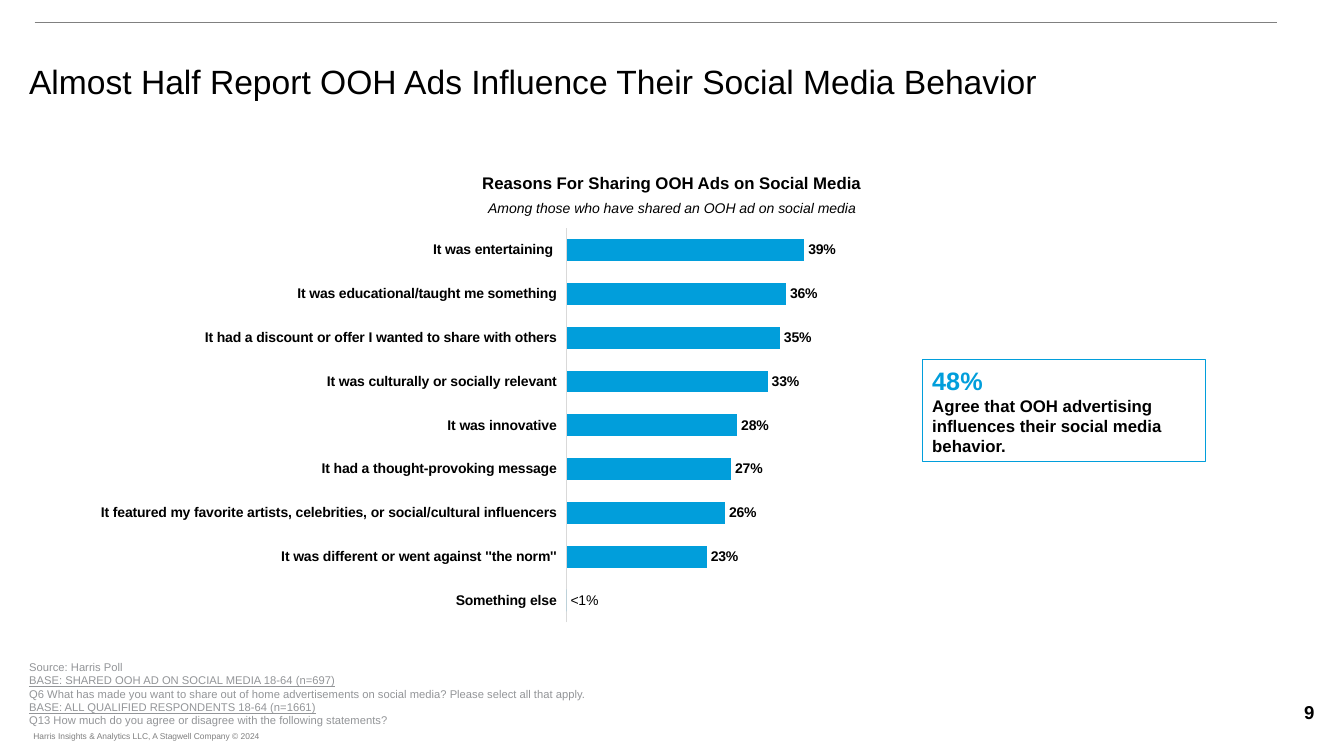
from collections import namedtuple

from lxml.etree import SubElement
from pptx import Presentation
from pptx.chart.data import CategoryChartData
from pptx.dml.color import RGBColor
from pptx.enum.chart import XL_CHART_TYPE, XL_LABEL_POSITION, XL_TICK_LABEL_POSITION, XL_TICK_MARK
from pptx.enum.shapes import MSO_CONNECTOR, MSO_SHAPE
from pptx.enum.text import MSO_ANCHOR, PP_ALIGN
from pptx.oxml import parse_xml
from pptx.oxml.ns import nsdecls, qn
from pptx.util import Pt

BLACK = RGBColor(0, 0, 0)
BLUE = RGBColor(0x01, 0x9E, 0xDB)
RULE_GRAY = RGBColor(0x80, 0x80, 0x80)
FOOTER_GRAY = RGBColor(0x7F, 0x7F, 0x7F)
NOTE_GRAY = RGBColor(0x93, 0x95, 0x98)
AXIS_GRAY = RGBColor(0xD9, 0xD9, 0xD9)
FONT = "Arial"

Box = namedtuple("Box", "left top width height")

REASONS = {
    "It was entertaining ": 0.39,
    "It was educational/taught me something": 0.36,
    "It had a discount or offer I wanted to share with others": 0.35,
    "It was culturally or socially relevant": 0.33,
    "It was innovative": 0.28,
    "It had a thought-provoking message": 0.27,
    "It featured my favorite artists, celebrities, or social/cultural influencers": 0.26,
    "It was different or went against ''the norm''": 0.23,
    "Something else": 0,
}

NOTES = [
    ("Source: Harris Poll", False),
    ("BASE: SHARED OOH AD ON SOCIAL MEDIA 18-64 (n=697)", True),
    ("Q6 What has made you want to share out of home advertisements on social media? "
     "Please select all that apply.", False),
    ("BASE: ALL QUALIFIED RESPONDENTS 18-64 (n=1661)", True),
    ("Q13 How much do you agree or disagree with the following statements?", False),
]


def in_points(box):
    return [Pt(length) for length in box]


def style_font(font, size, color=BLACK, bold=False, italic=False, underline=False):
    font.name = FONT
    font.size = Pt(size)
    font.bold = bold
    font.italic = italic
    font.underline = underline
    font.color.rgb = color


def write_line(text_frame, text, align=PP_ALIGN.LEFT, **style):
    paragraph = text_frame.add_paragraph() if text_frame.text else text_frame.paragraphs[0]
    paragraph.alignment = align
    run = paragraph.add_run()
    run.text = text
    style_font(run.font, **style)


def add_text_area(slide, box, anchor=MSO_ANCHOR.TOP):
    text_frame = slide.shapes.add_textbox(*in_points(box)).text_frame
    text_frame.word_wrap = True
    text_frame.vertical_anchor = anchor
    return text_frame


def add_header(slide, box):
    rule = slide.shapes.add_connector(
        MSO_CONNECTOR.STRAIGHT, Pt(box.left + 11), Pt(box.top),
        Pt(box.left + box.width), Pt(box.top))
    rule.line.color.rgb = RULE_GRAY
    rule.line.width = Pt(0.5)
    SubElement(rule._element.spPr, qn("a:effectLst"))
    title = add_text_area(
        slide, Box(box.left, box.top + 25.2, box.width, box.height - 25.2), MSO_ANCHOR.MIDDLE)
    write_line(title, "Almost Half Report OOH Ads Influence Their Social Media Behavior", size=24)


def add_chart_heading(slide, box):
    heading = add_text_area(slide, Box(box.left, box.top, box.width, 21.6))
    write_line(heading, "Reasons For Sharing OOH Ads on Social Media",
               align=PP_ALIGN.CENTER, size=12, bold=True)
    subheading = add_text_area(slide, Box(box.left, box.top + 18.7, box.width, 19.4))
    write_line(subheading, "Among those who have shared an OOH ad on social media",
               align=PP_ALIGN.CENTER, size=10, italic=True)


def add_reasons_chart(slide, box):
    data = CategoryChartData(number_format="0%")
    data.categories = list(REASONS)
    data.add_series("Series 1", list(REASONS.values()))
    chart = slide.shapes.add_chart(XL_CHART_TYPE.BAR_CLUSTERED, *in_points(box), data).chart
    chart.has_legend = False
    chart.has_title = False
    style_font(chart.font, 12, bold=True)

    category_axis = chart.category_axis
    category_axis.reverse_order = True
    category_axis.major_tick_mark = XL_TICK_MARK.NONE
    category_axis.minor_tick_mark = XL_TICK_MARK.NONE
    category_axis.tick_label_position = XL_TICK_LABEL_POSITION.LOW
    category_axis.format.line.color.rgb = AXIS_GRAY
    category_axis.format.line.width = Pt(0.75)
    style_font(category_axis.tick_labels.font, 10, bold=True)

    value_axis = chart.value_axis
    value_axis.minimum_scale = 0
    value_axis.maximum_scale = 1
    value_axis.has_major_gridlines = False
    value_axis.visible = False

    plot = chart.plots[0]
    plot.gap_width = 100
    plot.vary_by_categories = False
    series = plot.series[0]
    series.format.fill.solid()
    series.format.fill.fore_color.rgb = BLUE
    labels = series.data_labels
    labels.show_value = True
    labels.number_format = "0%"
    labels.number_format_is_linked = False
    labels.position = XL_LABEL_POSITION.OUTSIDE_END
    style_font(labels.font, 10, bold=True)
    smallest_label = series.points[len(REASONS) - 1].data_label
    write_line(smallest_label.text_frame, "<1%", size=10)
    smallest_label.position = XL_LABEL_POSITION.OUTSIDE_END

    plot_area = chart._chartSpace.chart.plotArea
    for layout in plot_area.findall(qn("c:layout")):
        plot_area.remove(layout)
    plot_area.insert(0, parse_xml(
        f'<c:layout {nsdecls("c")}><c:manualLayout><c:layoutTarget val="inner"/>'
        '<c:xMode val="edge"/><c:yMode val="edge"/><c:x val="0.44"/><c:y val="0"/>'
        '<c:w val="0.508"/><c:h val="1"/></c:manualLayout></c:layout>'))


def add_callout(slide, box):
    callout = slide.shapes.add_shape(MSO_SHAPE.RECTANGLE, *in_points(box))
    callout.shadow.inherit = False
    callout.fill.background()
    callout.line.color.rgb = BLUE
    callout.line.width = Pt(0.75)
    text_frame = callout.text_frame
    text_frame.word_wrap = True
    text_frame.vertical_anchor = MSO_ANCHOR.MIDDLE
    write_line(text_frame, "48%", size=18, color=BLUE, bold=True)
    write_line(text_frame, "Agree that OOH advertising influences their social media behavior.",
               size=12, bold=True)


def add_footer(slide, box):
    notes = add_text_area(slide, Box(box.left, box.top, 728.6, 55.4))
    for text, underline in NOTES:
        write_line(notes, text, size=8, color=NOTE_GRAY, underline=underline)
    copyright_line = add_text_area(slide, Box(box.left + 10.1, box.top + 50.4, 172, 14.4))
    copyright_line.margin_left = 0
    copyright_line.word_wrap = False
    write_line(copyright_line, "Harris Insights & Analytics LLC, A Stagwell Company © 2024",
               size=6, color=FOOTER_GRAY)
    page_number = add_text_area(
        slide, Box(box.left + box.width - 73.4, box.top + 28.8, 73.4, 23.8))
    write_line(page_number, "9", align=PP_ALIGN.CENTER, size=13.3, bold=True)


def main():
    presentation = Presentation()
    presentation.slide_width = Pt(960)
    presentation.slide_height = Pt(540)
    slide = presentation.slides.add_slide(presentation.slide_layouts[6])
    add_header(slide, Box(13.7, 15.8, 898.5, 59))
    add_reasons_chart(slide, Box(27.4, 162.7, 857.5, 282.2))
    add_chart_heading(slide, Box(326.9, 120.2, 306, 38.1))
    add_callout(slide, Box(658.8, 257, 202.3, 72.7))
    add_footer(slide, Box(13.7, 468, 958.3, 64.8))
    presentation.save("out.pptx")


if __name__ == "__main__":
    main()
